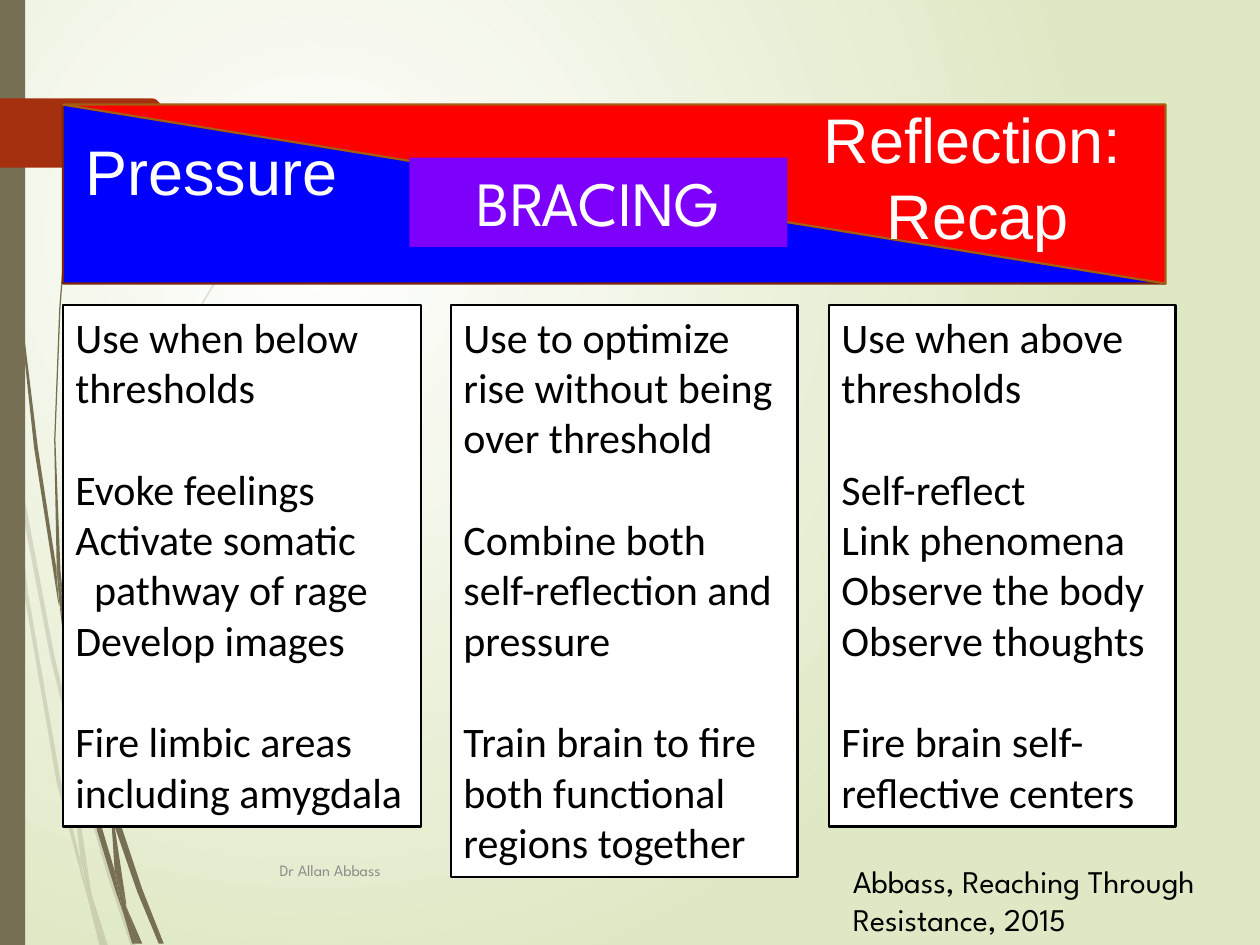
from pptx import Presentation, util as u
from pptx.dml.color import RGBColor
from pptx.enum import shapes, text
from pptx.oxml import parse_xml
from lxml import etree

NS = "http://schemas.openxmlformats.org/drawingml/2006/main"
KIND = shapes.MSO_SHAPE
OLIVE, WHITE, BLACK = "766F54", "FFFFFF", "000000"
SANS, HEAD, BODY = "Arial", "League Spartan", "Calibri"

# outline points in hundredths of an inch
PALE = [
    [(8, 350), (6, 322), (0, 282), (0, 299), (7, 344)],
    [(40, 522), (59, 599), (59, 586), (43, 520), (10, 345), (12, 376)],
    [(64, 607), (61, 596), (61, 610), (85, 694), (104, 751), (108, 751), (88, 692)],
    [(83, 751), (86, 751), (73, 711)],
    [(64, 683), (48, 619), (22, 469), (12, 376), (8, 350), (19, 470), (45, 621), (64, 693), (70, 714), (69, 707)],
    [(58, 599), (60, 646), (64, 683), (67, 692), (73, 711), (72, 706), (63, 646), (61, 610), (61, 608)],
    [(61, 584), (76, 462), (111, 349), (159, 245), (187, 198), (201, 175), (217, 154), (217, 153),
     (201, 175), (186, 197), (158, 244), (110, 348), (75, 461), (59, 584), (59, 586), (61, 596)],
    [(70, 714), (79, 751), (82, 751)],
    [(67, 692), (65, 683), (69, 707), (70, 714), (82, 751), (83, 751), (73, 711)],
]
DARK = [
    [(5, 110), (14, 233), (27, 355), (46, 477), (47, 481), (45, 457), (45, 453), (30, 355),
     (15, 232), (6, 109), (4, 48), (3, 0), (2, 0), (3, 48)],
    [(73, 592), (88, 645), (88, 631), (77, 590), (50, 472), (53, 505)],
    [(94, 649), (91, 641), (91, 656), (109, 708), (126, 749), (130, 749), (113, 706)],
    [(91, 691), (81, 657), (60, 556), (53, 505), (47, 477), (56, 557), (77, 659), (92, 708), (97, 722), (96, 717)],
    [(50, 472), (48, 453), (44, 349), (48, 245), (52, 193), (58, 141),
     (51, 193), (47, 245), (43, 349), (45, 449), (49, 472)],
    [(110, 749), (113, 749), (100, 719)],
    [(47, 477), (53, 505), (50, 472), (49, 472), (45, 449), (45, 453)],
    [(97, 722), (105, 749), (108, 749)],
    [(88, 645), (91, 691), (96, 706), (100, 719), (100, 716), (91, 656), (90, 651)],
    [(88, 645), (90, 651), (91, 656), (91, 641), (88, 631)],
    [(96, 706), (91, 691), (96, 717), (97, 722), (108, 749), (110, 749), (100, 719)],
]
ARROW = [(149, 107), (124, 132), (121, 133), (0, 133), (0, 78), (121, 78), (124, 79), (149, 104)]

# each column: place, then blocks of lines as (text, indent in cm)
COLS = [
    ((0.5, 2.42, 2.84, 4.14), [
        [("Use when below thresholds", 0)],
        [("Evoke feelings", 0), ("Activate somatic", 0), ("pathway of rage", 0.38), ("Develop images", 0)],
        [("Fire limbic areas including amygdala", 0)]]),
    ((6.58, 2.42, 2.75, 4.14), [
        [("Use when above thresholds", 0)],
        [("Self-reflect", 0), ("Link phenomena", 0), ("Observe the body", 0), ("Observe thoughts", 0)],
        [("Fire brain self- reflective centers", 0)]]),
    ((3.58, 2.42, 2.75, 4.54), [
        [("Use to optimize rise without being over threshold", 0)],
        [("Combine both self-reflection and pressure", 0)],
        [("Train brain to fire both functional regions together", 0)]]),
]
BAND = (0.5, 0.83, 8.75, 1.42)
TITLES = [
    ((6.44, 0.75, 3.39, 1.31), [[("Reflection:", 0), ("Recap", 1.27)]]),
    ((0.58, 1, 2.4, 0.71), [[("Pressure", 0)]]),
]
BRACE = ((3.25, 1.25, 3, 0.71), [[("BRACING", 0)]])
CREDIT = ((6.67, 6.79, 3.17, 0.71), [[("Abbass, Reaching Through", 0), ("Resistance, 2015", 0)]])
FOOT = ((2.12, 6.71, 6.25, 0.4), [[("Dr Allan Abbass", 0)]])

deck = Presentation()
deck.slide_width, deck.slide_height = u.Cm(25.4), u.Cm(19.05)
slide = deck.slides.add_slide(deck.slide_layouts[6])
tree = slide.shapes


def rgb(code):
    return RGBColor.from_string(code)


def place(box):
    return [u.Cm(v * 2.54) for v in box]


def paint(shape, fill, line=None):
    shape.shadow.inherit = False
    shape.fill.solid()
    shape.fill.fore_color.rgb = rgb(fill)
    if line:
        shape.line.color.rgb = rgb(line)
        shape.line.width = u.Pt(1.25)
    else:
        shape.line.fill.background()
    return shape


def block(kind, box, fill, line=None):
    return paint(tree.add_shape(kind, *place(box)), fill, line)


def trace(pts, fill, alpha=None):
    pen = tree.build_freeform(*pts[0], scale=float(u.Cm(0.0254)))
    pen.add_line_segments(pts[1:], close=True)
    shape = paint(pen.convert_to_shape(), fill)
    if alpha:
        tint = shape.fill._xPr.find(f".//{{{NS}}}srgbClr")
        etree.SubElement(tint, f"{{{NS}}}alpha").set("val", str(alpha * 1000))


def write(shape, blocks, size, font, color, align=text.PP_ALIGN.LEFT, anchor=text.MSO_ANCHOR.TOP, wrap=True):
    frame = shape.text_frame
    frame.word_wrap = wrap
    frame.vertical_anchor = anchor
    frame.text = "\n".join(line for part in blocks for line, _ in part)
    marks = [(i > 0 and j == 0, dent) for i, part in enumerate(blocks) for j, (_, dent) in enumerate(part)]
    for para, (gap, dent) in zip(frame.paragraphs, marks):
        para.alignment = align
        if gap:
            para.space_before = u.Pt(size * 1.22)
        if dent:
            para._p.get_or_add_pPr().set("marL", str(u.Cm(dent)))
        look = para.runs[0].font
        look.size, look.name = u.Pt(size), font
        look.color.rgb = rgb(color)


def label(box, blocks, *style, **opts):
    write(tree.add_textbox(*place(box)), blocks, *style, **opts)


back = slide.background.fill
back.gradient()
for stop, code in zip(back.gradient_stops, (WHITE, "DFE8C4")):
    stop.color.rgb = rgb(code)
grad = slide._element.find(f".//{{{NS}}}gradFill")
grad.remove(grad.find(f"{{{NS}}}lin"))
grad.append(parse_xml(f'<a:path xmlns:a="{NS}" path="circle">'
                      '<a:fillToRect l="50000" t="50000" r="100000" b="100000"/></a:path>'))

for pts in PALE:
    trace(pts, OLIVE, 20)
for pts in DARK:
    trace(pts, OLIVE)
block(KIND.RECTANGLE, (0, 0, 0.2, 7.5), OLIVE)
trace(ARROW, "A53010")

for box, blocks in COLS:
    write(block(KIND.RECTANGLE, box, WHITE, BLACK), blocks, 24, BODY, BLACK)
block(KIND.RIGHT_TRIANGLE, BAND, "0000FF", "7A240C")
block(KIND.RIGHT_TRIANGLE, BAND, "FF0000", "A45D12").rotation = 180
for box, blocks in TITLES:
    label(box, blocks, 36, SANS, WHITE)
write(block(KIND.RECTANGLE, BRACE[0], "7D00FA"), BRACE[1], 36, HEAD, WHITE, align=text.PP_ALIGN.CENTER)
label(*CREDIT, 18, HEAD, BLACK, wrap=False)
label(*FOOT, 9, HEAD, "8C8C8C", anchor=text.MSO_ANCHOR.MIDDLE)

deck.save("out.pptx")
